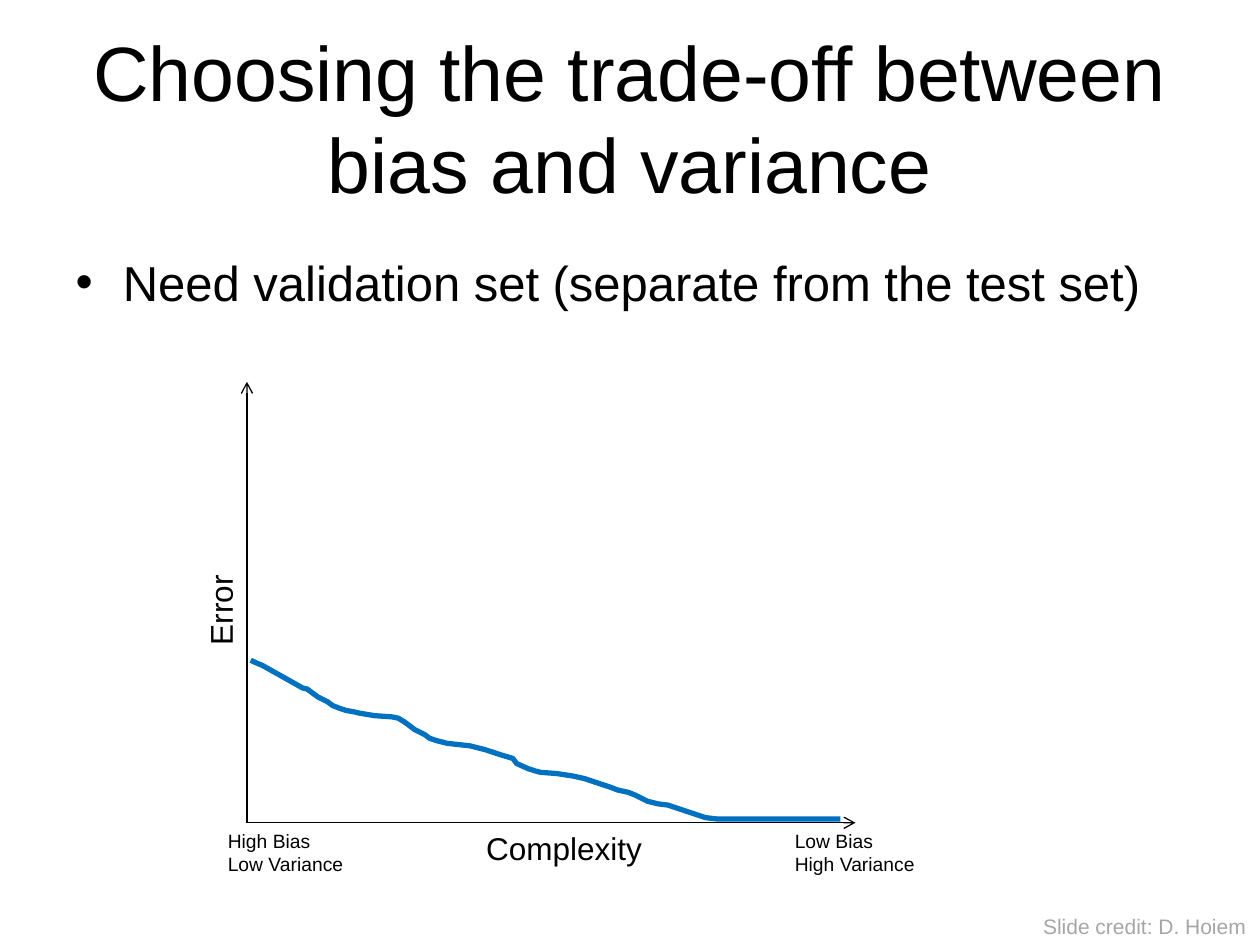
"""Build a slide on the bias and variance trade-off, with a training error curve."""
from lxml.etree import SubElement
from pptx import Presentation
from pptx.dml.color import RGBColor
from pptx.enum.shapes import MSO_CONNECTOR
from pptx.enum.text import MSO_ANCHOR, MSO_AUTO_SIZE, PP_ALIGN
from pptx.oxml.ns import qn
from pptx.util import Inches, Pt

BLACK = RGBColor(0x00, 0x00, 0x00)
BLUE = RGBColor(0x00, 0x70, 0xC0)
GRAY = RGBColor(0xA6, 0xA6, 0xA6)

deck = Presentation()
deck.slide_width, deck.slide_height = Inches(10), Inches(7.5)
unit = deck.slide_width // 1000
slide = deck.slides.add_slide(deck.slide_layouts[1])
shapes = slide.shapes


def place(shape, *cells):
    for name, cell in zip(("left", "top", "width", "height"), cells):
        setattr(shape, name, cell * unit)


def write(shape, text, size, color=BLACK):
    shape.text_frame.text = text
    look = {"name": "Arial", "size": Pt(size)}
    for para in shape.text_frame.paragraphs:
        for run in para.runs:
            for name, value in look.items():
                setattr(run.font, name, value)
            run.font.color.rgb = color


title, body = slide.placeholders
place(title, 50, 30, 900, 125)
write(title, "Choosing the trade-off between bias and variance", 44)
title.text_frame.vertical_anchor = MSO_ANCHOR.MIDDLE
title.text_frame.paragraphs[0].alignment = PP_ALIGN.CENTER

place(body, 50, 195, 900, 475)
write(body, "Need validation set (separate from the test set)", 28)
body.text_frame.paragraphs[0].space_before = Pt(0)

curve = [
    (199, 524), (203, 525.5), (208, 527.5), (233, 542), (240, 546), (244, 547),
    (252, 553), (260, 557), (264, 560), (269, 562), (275, 564), (281, 565),
    (285, 566), (297, 568), (311, 569), (316, 570.5), (321, 573), (329, 579),
    (333, 581), (337, 583), (341, 586), (347, 588), (355, 590), (364, 591),
    (373, 592), (385, 595), (397, 599), (407, 602), (410, 606), (419, 610),
    (425, 612), (429, 613), (442, 614), (455, 616), (464, 618), (473, 621),
    (485, 625), (490, 627), (499, 629), (504, 631), (508, 633), (514, 635.5),
    (522, 638), (530, 639), (551, 646), (560, 649), (569, 650), (667, 650),
]
pen = shapes.build_freeform(*curve[0], scale=unit)
pen.add_line_segments(curve[1:], close=False)
error = pen.convert_to_shape()
error.shadow.inherit = False
error.fill.background()
error.line.color.rgb = BLUE
error.line.width = Pt(3)

left, base = 196, 653
for right, top in ((left, 303), (679, base)):
    ends = [cell * unit for cell in (left, base, right, top)]
    axis = shapes.add_connector(MSO_CONNECTOR.STRAIGHT, *ends)
    axis.line.color.rgb = BLACK
    axis.line.width = Pt(0.75)
    SubElement(axis.line._get_or_add_ln(), qn("a:tailEnd"), type="arrow")
    SubElement(axis._element.spPr, qn("a:effectLst"))

labels = [
    ("Complexity", 18, BLACK, 0, (376, base, 145, 40)),
    ("Low Bias\nHigh Variance", 11, BLACK, 0, (621, base, 117, 47)),
    ("High Bias\nLow Variance", 11, BLACK, 0, (171, base, 114, 47)),
    ("Error", 18, BLACK, 270, (137, 464, 76, 40)),
    ("Slide credit: D. Hoiem", 12, GRAY, 0, (818, 720, 182, 30)),
]
for text, size, color, turn, cells in labels:
    label = shapes.add_textbox(0, 0, unit, unit)
    place(label, *cells)
    label.rotation = turn
    write(label, text, size, color)
    frame = {"word_wrap": False, "auto_size": MSO_AUTO_SIZE.SHAPE_TO_FIT_TEXT}
    for name, value in frame.items():
        setattr(label.text_frame, name, value)

deck.save("out.pptx")
